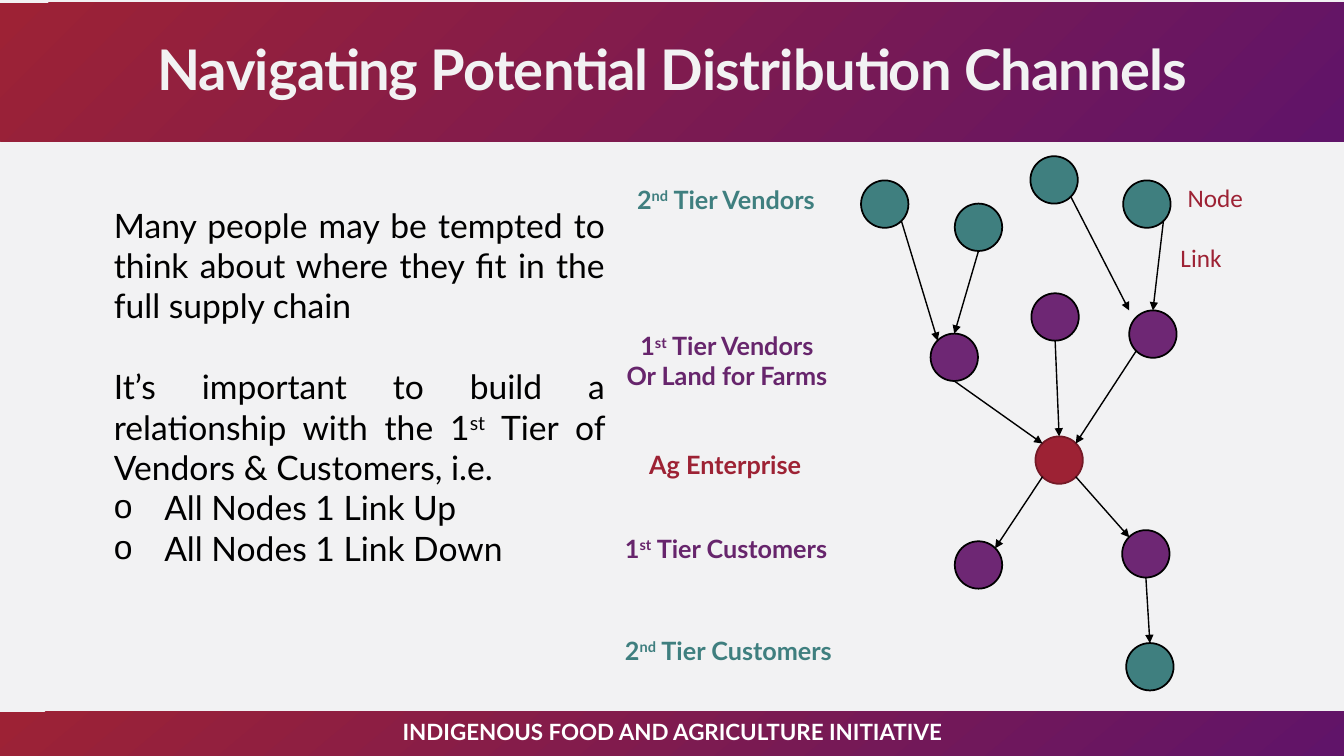
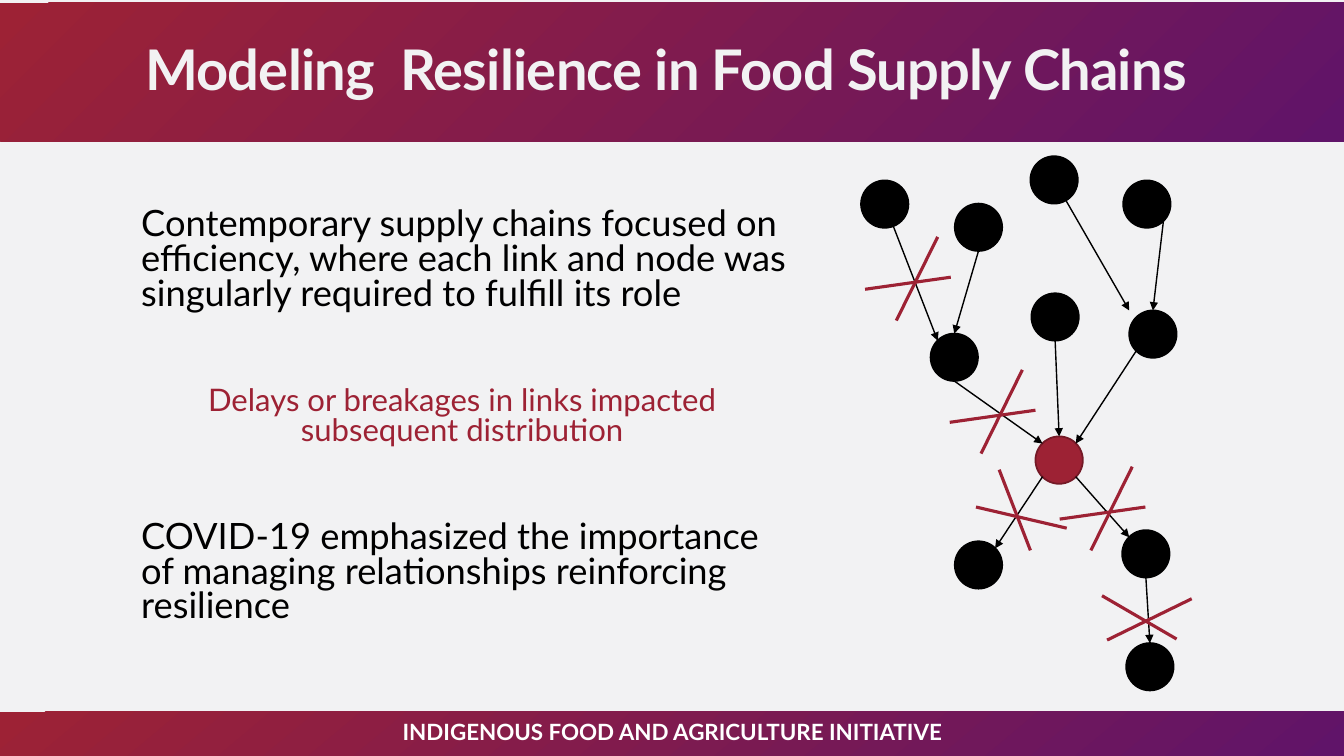
from lxml.etree import SubElement
from pptx import Presentation
from pptx.dml.color import RGBColor
from pptx.enum.shapes import MSO_CONNECTOR, MSO_SHAPE
from pptx.enum.text import MSO_ANCHOR, MSO_AUTO_SIZE, PP_ALIGN
from pptx.oxml.ns import qn
from pptx.util import Inches, Pt

RED, RED_EDGE, TEAL, PURPLE = "9D2234", "741926", "3F7F7F", "6E2774"
LABEL_PURPLE, BLACK, WHITE, PALE = "67256C", "000000", "FFFFFF", "F2F2F3"
GRADIENT = ("9D2235", "601469")

NODE_SIZE = 0.47
NODES = {
    "vendor a": (8.54, 1.79, TEAL),
    "vendor b": (9.47, 2.02, TEAL),
    "vendor c": (10.22, 1.55, TEAL),
    "vendor d": (11.14, 1.79, TEAL),
    "supplier a": (9.23, 3.31, PURPLE),
    "supplier b": (10.23, 2.91, PURPLE),
    "supplier c": (11.2, 3.08, PURPLE),
    "enterprise": (10.27, 4.33, RED),
    "customer a": (9.47, 5.37, PURPLE),
    "customer b": (11.13, 5.26, PURPLE),
    "end customer": (11.17, 6.38, TEAL),
}
SITES = {
    "center": (0.5, 0.5), "corner": (0, 0),
    "top": (0.5, 0), "bottom": (0.5, 1),
    "top left": (0.15, 0.15), "top right": (0.85, 0.15),
    "bottom left": (0.15, 0.85), "bottom right": (0.85, 0.85),
}
LINKS = [
    ("vendor a", "bottom right", "supplier a", "top left"),
    ("vendor b", "bottom", "supplier a", "top"),
    ("vendor c", "bottom right", "supplier c", "corner"),
    ("vendor d", "bottom right", "supplier c", "top"),
    ("supplier a", "bottom", "enterprise", "top left"),
    ("supplier b", "bottom", "enterprise", "top"),
    ("supplier c", "bottom left", "enterprise", "top right"),
    ("enterprise", "bottom left", "customer a", "top right"),
    ("enterprise", "bottom right", "customer b", "top left"),
    ("customer b", "bottom", "end customer", "top"),
]
CROSS_ORIGINS = [(8.58, 2.35), (9.42, 3.67), (10.51, 4.63)]
CROSS_STROKES = [((0.31, 0.83), (0.72, 0)), ((0, 0.52), (0.85, 0.4))]
OTHER_STROKES = [
    ((9.68, 5.03), (10.58, 5.24)), ((9.91, 4.66), (10.22, 5.46)),
    ((10.98, 6.35), (11.82, 5.94)), ((10.93, 5.91), (11.67, 6.34)),
]


def color(value):
    """Turn a hex string into a colour."""
    return RGBColor.from_string(value)


def place(shape, left, top, width, height):
    """Move and size a shape, in inches."""
    shape.left, shape.top = Inches(left), Inches(top)
    shape.width, shape.height = Inches(width), Inches(height)


def site_point(name, site):
    """Return the point of a node's connection site."""
    left, top, _ = NODES[name]
    across, down = SITES[site]
    return left + NODE_SIZE * across, top + NODE_SIZE * down


class Deck:
    """Hold the shared style and the current slide."""

    def __init__(self):
        """Set the page size and the background."""
        self.presentation = Presentation()
        self.presentation.slide_width = Inches(13.33)
        self.presentation.slide_height = Inches(7.5)
        self.master = self.presentation.slide_master
        self.master.background.fill.solid()
        self.master.background.fill.fore_color.rgb = color(PALE)
        self.slide = None

    def add_slide(self, title):
        """Start a slide with its title and footer."""
        first = self.slide is None
        self.slide = self.presentation.slides.add_slide(self.presentation.slide_layouts[1])
        if first:
            self.master_band(0.03, 1.37, 45, 101)
            self.master_band(7.06, 0.46, 50, 102)
        shape = self.slide.shapes.title
        place(shape, 0.92, 0, 11.5, 1.45)
        frame = self.prepare(shape, MSO_ANCHOR.MIDDLE)
        paragraph = frame.paragraphs[0]
        self.fill_paragraph(paragraph, title, 40, PALE, bold=True, align=PP_ALIGN.CENTER, line=0.85)
        paragraph.font._rPr.set("spc", "-50")
        self.label("INDIGENOUS FOOD AND AGRICULTURE INITIATIVE", 0.92, 7.06, 11.5, WHITE,
                   size=16, align=PP_ALIGN.CENTER, anchor=MSO_ANCHOR.MIDDLE)

    def master_band(self, top, height, angle, identifier):
        """Put a gradient band on the slide master."""
        band = self.slide.shapes.add_shape(
            MSO_SHAPE.RECTANGLE, 0, Inches(top), self.presentation.slide_width, Inches(height))
        band.shadow.inherit = False
        band.line.fill.background()
        band.fill.gradient()
        band.fill.gradient_angle = 360 - angle
        for stop, value in zip(band.fill.gradient_stops, GRADIENT):
            stop.color.rgb = color(value)
        band.element.nvSpPr.cNvPr.set("id", str(identifier))
        self.master.shapes._spTree.insert(2, band.element)

    def prepare(self, shape, anchor=MSO_ANCHOR.TOP):
        """Set up the text frame of a shape."""
        frame = shape.text_frame
        frame.word_wrap = True
        frame.auto_size = MSO_AUTO_SIZE.NONE
        frame.vertical_anchor = anchor
        return frame

    def fill_paragraph(self, paragraph, text, size, fill, font="Lato", bold=False,
                       align=PP_ALIGN.LEFT, line=1.0, before=0, after=0,
                       indent=0, hanging=0, bullet=None):
        """Fill a paragraph; text between carets is superscript."""
        properties = paragraph._p.get_or_add_pPr()
        properties.set("marL", str(Inches(indent)))
        properties.set("indent", str(Inches(-hanging)))
        if bullet:
            SubElement(properties, qn("a:buChar")).set("char", bullet)
        else:
            SubElement(properties, qn("a:buNone"))
        paragraph.alignment = align
        paragraph.line_spacing = line
        paragraph.space_before, paragraph.space_after = Pt(before), Pt(after)
        paragraph.font.name, paragraph.font.size = font, Pt(size)
        paragraph.font.bold = bold
        paragraph.font.color.rgb = color(fill)
        for index, part in enumerate(text.split("^")):
            run = paragraph.add_run()
            run.text = part
            if index % 2:
                run.font._rPr.set("baseline", "30000")

    def body(self, box, items, **shared):
        """Fill the body placeholder with text and style pairs."""
        shape = self.slide.placeholders[1]
        place(shape, *box)
        frame = self.prepare(shape)
        for index, (text, style) in enumerate(items):
            paragraph = frame.add_paragraph() if index else frame.paragraphs[0]
            self.fill_paragraph(paragraph, text, **{**shared, **style})

    def label(self, text, left, top, width, fill, size=18, font="Lato", bold=True,
              align=PP_ALIGN.LEFT, anchor=MSO_ANCHOR.TOP):
        """Add a text box with one paragraph for each line."""
        lines = text.split("\n")
        height = 0.1 + 0.3 * len(lines)
        shape = self.slide.shapes.add_textbox(
            Inches(left), Inches(top), Inches(width), Inches(height))
        frame = self.prepare(shape, anchor)
        for index, line in enumerate(lines):
            paragraph = frame.add_paragraph() if index else frame.paragraphs[0]
            self.fill_paragraph(paragraph, line, size, fill, font, bold, align)

    def node(self, left, top, fill):
        """Add a round node."""
        shape = self.slide.shapes.add_shape(
            MSO_SHAPE.OVAL, Inches(left), Inches(top), Inches(NODE_SIZE), Inches(NODE_SIZE))
        shape.shadow.inherit = False
        shape.fill.solid()
        shape.fill.fore_color.rgb = color(fill)
        shape.line.color.rgb = color(RED_EDGE if fill == RED else BLACK)
        shape.line.width = Pt(1.25)

    def line(self, start, end, fill, width, arrow=False):
        """Add a straight line, with an arrowhead on request."""
        points = [Inches(value) for value in (*start, *end)]
        connector = self.slide.shapes.add_connector(MSO_CONNECTOR.STRAIGHT, *points)
        connector.line.color.rgb = color(fill)
        connector.line.width = Pt(width)
        if arrow:
            SubElement(connector.line._get_or_add_ln(), qn("a:tailEnd")).set("type", "triangle")
        SubElement(connector._element.spPr, qn("a:effectLst"))

    def network(self, plain=False, moved_starts=None):
        """Draw the supply chain nodes and links."""
        for left, top, fill in NODES.values():
            self.node(left, top, BLACK if plain and fill != RED else fill)
        for source, start, target, end in LINKS:
            start = (moved_starts or {}).get(source, start)
            self.line(site_point(source, start), site_point(target, end), BLACK, 1, arrow=True)

    def crosses(self):
        """Strike out the broken links."""
        strokes = [
            tuple((left + x, top + y) for x, y in stroke)
            for left, top in CROSS_ORIGINS for stroke in CROSS_STROKES
        ]
        for start, end in strokes + OTHER_STROKES:
            self.line(start, end, RED, 2.25)


def channels_slide(deck):
    """Build the slide on distribution channels."""
    deck.add_slide("Navigating Potential Distribution Channels")
    bullet = {"indent": 0.5, "hanging": 0.5, "bullet": "o"}
    deck.body((1.03, 1.98, 5.07, 4.67), [
        ("Many people may be tempted to think about where they fit in the full supply chain", {}),
        ("It’s important to build a relationship with the 1^st^ Tier of Vendors & Customers, i.e.",
         {"before": 29}),
        ("All Nodes 1 Link Up", bullet),
        ("All Nodes 1 Link Down", bullet),
    ], size=24, fill=BLACK, align=PP_ALIGN.JUSTIFY)
    deck.network()
    deck.label("2^nd^ Tier Vendors", 6.22, 1.78, 2.16, TEAL)
    deck.label("1^st^ Tier Vendors\nOr Land for Farms", 5.81, 3.23, 2.8, LABEL_PURPLE,
               align=PP_ALIGN.CENTER)
    deck.label("Ag Enterprise", 6.34, 4.41, 1.92, RED)
    deck.label("1^st^ Tier Customers", 6.1, 5.24, 2.45, LABEL_PURPLE)
    deck.label("2^nd^ Tier Customers", 6.1, 6.25, 2.45, TEAL)
    deck.label("Node", 11.68, 1.76, 1.19, RED, font="Calibri", bold=False)
    deck.label("Link", 11.61, 2.35, 1.19, RED, font="Calibri", bold=False)


def resilience_slide(deck):
    """Build the slide on supply chain resilience."""
    deck.add_slide("Modeling  Resilience in Food Supply Chains ")
    deck.body((1.2, 2.02, 6.77, 4.4), [
        ("Contemporary supply chains focused on efficiency, where each link and node was "
         "singularly required to fulfill its role", {"indent": 0.1}),
        ("Delays or breakages in links impacted subsequent distribution",
         {"size": 22.2, "fill": RED, "align": PP_ALIGN.CENTER, "before": 51}),
        ("COVID-19 emphasized the importance of managing relationships reinforcing resilience",
         {"indent": 0.1, "before": 51}),
    ], size=25.9, fill=BLACK, line=0.8, after=2)
    deck.network(plain=True, moved_starts={"vendor a": "center", "vendor c": "center"})
    deck.crosses()


def main():
    """Build and save the presentation."""
    deck = Deck()
    channels_slide(deck)
    resilience_slide(deck)
    deck.presentation.save("out.pptx")


if __name__ == "__main__":
    main()
